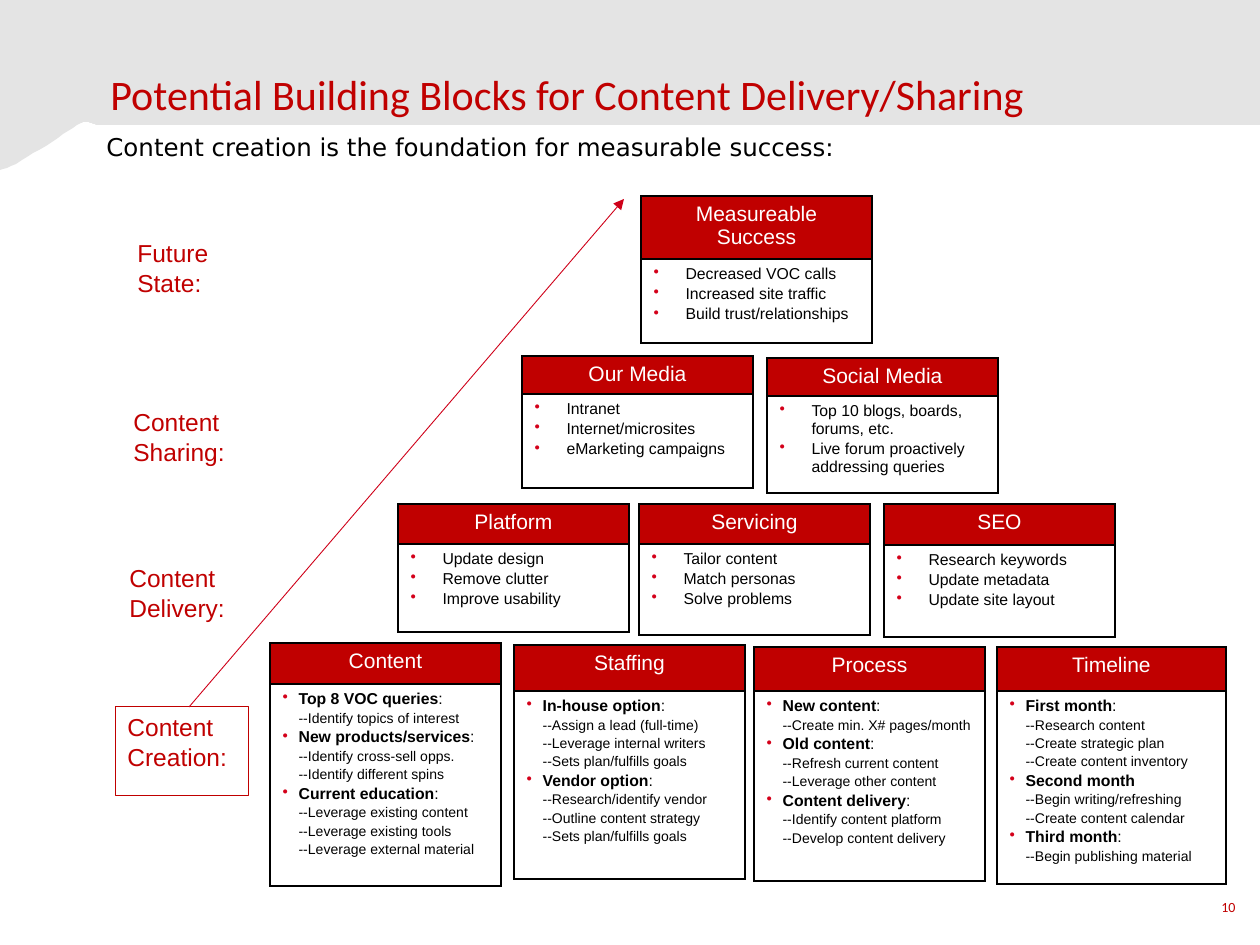
from dataclasses import dataclass

from lxml.etree import SubElement
from pptx import Presentation
from pptx.dml.color import RGBColor as RGB
from pptx.enum.shapes import MSO_CONNECTOR as CONN, MSO_SHAPE as SHAPE
from pptx.enum.text import MSO_ANCHOR as ANCHOR, PP_ALIGN as ALIGN
from pptx.oxml.ns import qn
from pptx.util import Pt

SCALE = 914400 / 126


@dataclass(frozen=True)
class Theme:
    red: str = "C00000"
    bullet: str = "D4001A"
    arrow: str = "CF0019"
    band: str = "E4E4E4"
    black: str = "000000"
    white: str = "FFFFFF"
    font: str = "Arial"
    title_font: str = "Calibri"
    lead_font: str = "DejaVu Sans"
    title: int = 24
    label: int = 14
    head: int = 12
    item: int = 9
    detail: int = 8
    gap: float = 1.4


T = Theme()

LABELS = [
    ("Future\nState:", 125, 232),
    ("Content\nSharing:", 121, 401),
    ("Content\nDelivery:", 117, 557),
]

BLOCKS = [
    ("Measureable Success", (641, 196, 231), (63, 84),
     ["Decreased VOC calls", "Increased site traffic", "Build trust/relationships"]),
    ("Our Media", (522, 356, 231), (38, 94),
     ["Intranet", "Internet/microsites", "eMarketing campaigns"]),
    ("Social Media", (767, 358, 231), (38, 97),
     ["Top 10 blogs, boards, forums, etc.", "Live forum proactively addressing queries"]),
    ("Platform", (398, 504, 231), (40, 88),
     ["Update design", "Remove clutter", "Improve usability"]),
    ("Servicing", (639, 504, 231), (40, 91),
     ["Tailor content", "Match personas", "Solve problems"]),
    ("SEO", (884, 504, 231), (41, 92),
     ["Research keywords", "Update metadata", "Update site layout"]),
    ("Content", (270, 643, 231), (41, 202),
     ["Top 8 VOC queries:", "--Identify topics of interest",
      "New products/services:", "--Identify cross-sell opps.", "--Identify different spins",
      "Current education:", "--Leverage existing content", "--Leverage existing tools",
      "--Leverage external material"]),
    ("Staffing", (514, 645, 231), (46, 188),
     ["In-house option:", "--Assign a lead (full-time)", "--Leverage internal writers",
      "--Sets plan/fulfills goals",
      "Vendor option:", "--Research/identify vendor", "--Outline content strategy",
      "--Sets plan/fulfills goals"]),
    ("Process", (754, 647, 231), (44, 190),
     ["New content:", "--Create min. X# pages/month",
      "Old content:", "--Refresh current content", "--Leverage other content",
      "Content delivery:", "--Identify content platform", "--Develop content delivery"]),
    ("Timeline", (997, 647, 229), (44, 193),
     ["First month:", "--Research content", "--Create strategic plan",
      "--Create content inventory",
      "Second month", "--Begin writing/refreshing", "--Create content calendar",
      "Third month:", "--Begin publishing material"]),
]


def px(n):
    return round(n * SCALE)


def write(p, text, size=T.label, color=T.red, font=T.font, bold=False, align=ALIGN.LEFT):
    p.alignment = align
    for i, line in enumerate(text.split("\n")):
        if i:
            p.add_line_break()
        r = p.add_run()
        r.text = line
        r.font.size, r.font.name, r.font.bold = Pt(size), font, bold
        r.font.color.rgb = RGB.from_string(color)


def add_text(s, text, box, anchor=ANCHOR.TOP, **fmt):
    tf = s.shapes.add_textbox(*map(px, box)).text_frame
    tf.word_wrap = True
    tf.vertical_anchor = anchor
    write(tf.paragraphs[0], text, **fmt)


def add_framed_label(s, text, box):
    sp = s.shapes.add_shape(SHAPE.RECTANGLE, *map(px, box))
    sp.shadow.inherit = False
    sp.fill.background()
    sp.line.color.rgb = RGB.from_string(T.red)
    sp.line.width = Pt(0.5)
    sp.text_frame.vertical_anchor = ANCHOR.TOP
    write(sp.text_frame.paragraphs[0], text)


def curve(a, b, c, d, steps=16):
    for i in range(1, steps + 1):
        t = i / steps
        u = 1 - t
        weights = u**3, 3 * u * u * t, 3 * u * t * t, t**3
        yield tuple(sum(w * q[k] for w, q in zip(weights, (a, b, c, d))) for k in (0, 1))


def add_band(s):
    start, crest, end = (96, 125), (81, 123), (0, 170)
    points = [(1260, 0), (1260, 125), start,
              *curve(start, (91, 122), (86, 121), crest),
              *curve(crest, (64, 132), (14, 169), end)]
    fb = s.shapes.build_freeform(0, 0, scale=SCALE)
    fb.add_line_segments(points, close=True)
    sp = fb.convert_to_shape()
    sp.shadow.inherit = False
    sp.fill.solid()
    sp.fill.fore_color.rgb = RGB.from_string(T.band)
    sp.line.fill.background()


def add_arrow(s, start, end):
    c = s.shapes.add_connector(CONN.STRAIGHT, *map(px, start + end))
    c.line.color.rgb = RGB.from_string(T.arrow)
    c.line.width = Pt(0.5)
    SubElement(c.line._get_or_add_ln(), qn("a:tailEnd"), type="triangle")
    SubElement(c._element.spPr, qn("a:effectLst"))


def add_color(parent, color):
    SubElement(parent, qn("a:srgbClr"), val=color)


def style_cell(cell, color):
    tcPr = cell._tc.get_or_add_tcPr()
    for side in "LRTB":
        ln = SubElement(tcPr, qn(f"a:ln{side}"), w=str(Pt(1)))
        add_color(SubElement(ln, qn("a:solidFill")), T.black)
    cell.fill.solid()
    cell.fill.fore_color.rgb = RGB.from_string(color)


def set_indent(p, left, hanging, bullet):
    pPr = p._p.get_or_add_pPr()
    pPr.set("marL", str(px(left)))
    pPr.set("indent", str(px(-hanging)))
    if bullet:
        add_color(SubElement(pPr, qn("a:buClr")), T.bullet)
        SubElement(pPr, qn("a:buChar"), char="•")


def write_items(tf, items):
    grouped = any(item.startswith("--") for item in items)
    for i, item in enumerate(items):
        p = tf.add_paragraph() if i else tf.paragraphs[0]
        if item.startswith("--"):
            p.level = 1
            set_indent(p, 32, 16, False)
            write(p, item, size=T.detail, color=T.black)
        else:
            indent = 16 if grouped else 32
            set_indent(p, indent, indent, True)
            name, colon, _ = item.partition(":")
            write(p, name, size=T.item, color=T.black, bold=grouped)
            if colon:
                write(p, colon, size=T.item, color=T.black)
        if i:
            p.space_before = Pt(T.gap)


def add_block(s, title, place, heights, items):
    x, y, w = place
    table = s.shapes.add_table(2, 1, *map(px, (x, y, w, sum(heights)))).table
    table.first_row = table.horz_banding = False
    for row, h in zip(table.rows, heights):
        row.height = px(h)
    head, body = table.cell(0, 0), table.cell(1, 0)
    style_cell(head, T.red)
    style_cell(body, T.white)
    write(head.text_frame.paragraphs[0], title, size=T.head, color=T.white, align=ALIGN.CENTER)
    write_items(body.text_frame, items)


def main():
    prs = Presentation()
    prs.slide_width, prs.slide_height = px(1260), px(945)
    s = prs.slides.add_slide(prs.slide_layouts[6])
    add_band(s)
    add_text(s, "Potential Building Blocks for Content Delivery/Sharing", (98, 5, 1099, 120),
             anchor=ANCHOR.BOTTOM, size=T.title, font=T.title_font)
    add_text(s, "Content creation is the foundation for measurable success:",
             (94, 126, 1131, 43), color=T.black, font=T.lead_font)
    add_text(s, "10", (1197, 882, 63, 50), anchor=ANCHOR.MIDDLE, size=T.detail,
             font=T.title_font, align=ALIGN.CENTER)
    for text, x, y in LABELS:
        add_text(s, text, (x, y, 123, 91))
    add_framed_label(s, "Content\nCreation:", (115, 706, 134, 90))
    add_arrow(s, (189, 707), (624, 199))
    for block in BLOCKS:
        add_block(s, *block)
    prs.save("out.pptx")


if __name__ == "__main__":
    main()
